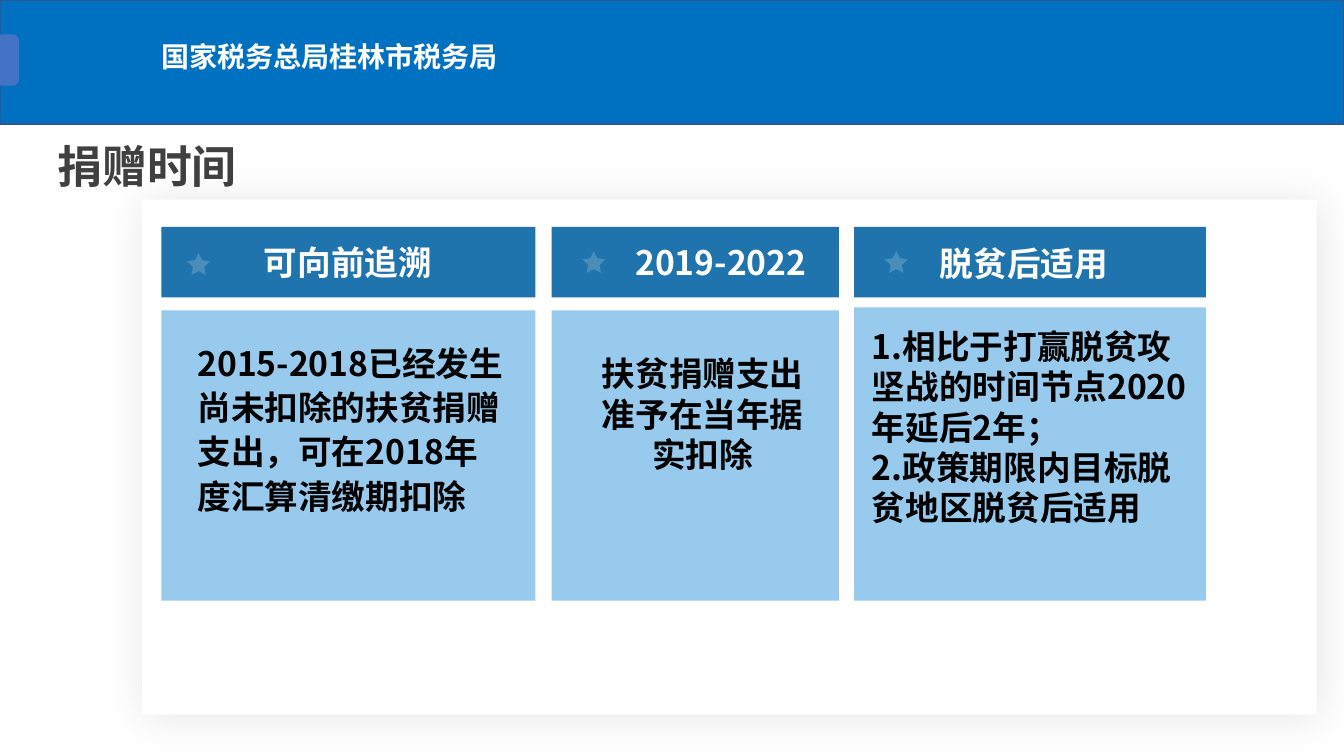
from dataclasses import dataclass
from math import cos, pi, sin

from lxml.etree import SubElement
from pptx import Presentation
from pptx.dml.color import RGBColor
from pptx.enum.shapes import MSO_SHAPE
from pptx.enum.text import MSO_ANCHOR, MSO_AUTO_SIZE, PP_ALIGN
from pptx.oxml.ns import qn
from pptx.util import Inches, Pt


@dataclass(frozen=True)
class Theme:
    font: str = "Noto Sans CJK SC"
    band: str = "0070C0"
    band_line: str = "325491"
    tab: str = "4472C4"
    header: str = "1F74AD"
    body: str = "97CAEC"
    white: str = "FFFFFF"
    black: str = "000000"
    title: str = "404040"
    star: str = "F2F2F2"
    office_size: int = 20
    text_size: int = 24
    title_size: int = 32


@dataclass(frozen=True)
class Box:
    left: float
    top: float
    width: float
    height: float

    def lengths(self) -> list:
        return [Inches(v) for v in (self.left, self.top, self.width, self.height)]


@dataclass(frozen=True)
class Column:
    left: float
    width: float
    body_top: float
    star: tuple[float, float]
    header: str
    header_box: Box
    lines: tuple[str, ...]
    text_box: Box
    align: PP_ALIGN = PP_ALIGN.LEFT
    spacing: float = 1.0
    wrap: bool = True


THEME = Theme()
HEADER_TOP, HEADER_HEIGHT, BODY_BOTTOM = 2.25, 0.7, 5.96
STAR_RADIUS = 0.12

COLUMNS = (
    Column(1.6, 3.71, 3.08, (1.97, 2.63), "可向前追溯", Box(2.42, 2.35, 2.06, 0.5),
           ("2015-2018已经发生尚未扣除的扶贫捐赠支出，可在2018年度汇算清缴期扣除",),
           Box(1.86, 3.31, 3.28, 1.86), spacing=1.1),
    Column(5.47, 2.85, 3.08, (5.89, 2.61), "2019-2022", Box(6.1, 2.35, 2.1, 0.5),
           ("扶贫捐赠支出准予在当年据实扣除",),
           Box(5.74, 3.39, 2.46, 1.43), PP_ALIGN.CENTER),
    Column(8.47, 3.49, 3.05, (8.89, 2.61), "脱贫后适用", Box(9.16, 2.36, 1.99, 0.5),
           ("1.相比于打赢脱贫攻", "坚战的时间节点2020", "年延后2年；",
            "2.政策期限内目标脱", "贫地区脱贫后适用"),
           Box(8.55, 3.27, 2.51, 1.93), wrap=False),
)


def paint(sp, color: str) -> None:
    sp.shadow.inherit = False
    sp.fill.solid()
    sp.fill.fore_color.rgb = RGBColor.from_string(color)
    sp.line.fill.background()


def add_rect(shapes, box: Box, color: str):
    sp = shapes.add_shape(MSO_SHAPE.RECTANGLE, *box.lengths())
    paint(sp, color)
    return sp


def add_outline(shapes, points: list[tuple[float, float]], color: str):
    start, *rest = [(Inches(x), Inches(y)) for x, y in points]
    builder = shapes.build_freeform(*start)
    builder.add_line_segments(rest, close=True)
    sp = builder.convert_to_shape()
    paint(sp, color)
    return sp


def write(sp, lines: tuple[str, ...], size: int, color: str,
          align: PP_ALIGN = PP_ALIGN.LEFT, spacing: float = 1.0, **frame) -> None:
    tf = sp.text_frame
    settings = {"word_wrap": True, "vertical_anchor": MSO_ANCHOR.TOP,
                "auto_size": MSO_AUTO_SIZE.NONE} | frame
    for name, value in settings.items():
        setattr(tf, name, value)
    for i, line in enumerate(lines):
        p = tf.add_paragraph() if i else tf.paragraphs[0]
        p.alignment, p.line_spacing = align, spacing
        r = p.add_run()
        r.text = line
        for name, value in {"size": Pt(size), "bold": True, "name": THEME.font}.items():
            setattr(r.font, name, value)
        r.font.color.rgb = RGBColor.from_string(color)
        SubElement(r.font._element, qn("a:ea"), typeface=THEME.font)


def add_alpha(color, percent: int) -> None:
    SubElement(color, qn("a:alpha"), val=str(percent * 1000))


def add_panel_shadow(sp) -> None:
    effects = sp._element.spPr.find(qn("a:effectLst"))
    shadow = SubElement(effects, qn("a:outerShdw"), blurRad=str(Pt(32)), dist=str(Pt(3)),
                        dir=str(45 * 60000), algn="ctr", rotWithShape="0")
    add_alpha(SubElement(shadow, qn("a:srgbClr"), val=THEME.black), 10)


def add_star(shapes, center: tuple[float, float]) -> None:
    radii = [STAR_RADIUS / (1 + i % 2) for i in range(10)]
    points = [(center[0] + radius * sin(i * pi / 5), center[1] - radius * cos(i * pi / 5))
              for i, radius in enumerate(radii)]
    sp = add_outline(shapes, points, THEME.star)
    add_alpha(sp._element.spPr.find(qn("a:solidFill"))[0], 20)


def add_tab(shapes, box: Box, radius: float) -> None:
    turns = [i * pi / 16 for i in range(9)]
    x, bottom = box.left + box.width - radius, box.top + box.height
    upper = [(x + radius * sin(t), box.top + radius * (1 - cos(t))) for t in turns]
    lower = [(x + radius * cos(t), bottom - radius * (1 - sin(t))) for t in turns]
    add_outline(shapes, [(box.left, box.top), *upper, *lower, (box.left, bottom)], THEME.tab)


def add_column(shapes, col: Column) -> None:
    add_rect(shapes, Box(col.left, HEADER_TOP, col.width, HEADER_HEIGHT), THEME.header)
    write(shapes.add_textbox(*col.header_box.lengths()), (col.header,), THEME.text_size,
          THEME.white, PP_ALIGN.CENTER)
    add_rect(shapes, Box(col.left, col.body_top, col.width, BODY_BOTTOM - col.body_top),
             THEME.body)
    write(shapes.add_textbox(*col.text_box.lengths()), col.lines, THEME.text_size, THEME.black,
          col.align, col.spacing, word_wrap=col.wrap, vertical_anchor=MSO_ANCHOR.MIDDLE)
    add_star(shapes, col.star)


def main() -> None:
    prs = Presentation()
    prs.slide_width, prs.slide_height = Inches(13.33), Inches(7.5)
    shapes = prs.slides.add_slide(prs.slide_layouts[5]).shapes

    title = shapes.title
    title.left, title.top, title.width, title.height = Box(0.46, 1.22, 2, 0.69).lengths()
    write(title, ("捐赠时间",), THEME.title_size, THEME.title, PP_ALIGN.CENTER, 1.2,
          word_wrap=False, auto_size=MSO_AUTO_SIZE.SHAPE_TO_FIT_TEXT)

    band = add_rect(shapes, Box(0, 0, 13.33, 1.23), THEME.band)
    band.line.color.rgb = RGBColor.from_string(THEME.band_line)
    band.line.width = Pt(1)
    write(shapes.add_textbox(*Box(1.5, 0.34, 4.95, 0.44).lengths()),
          ("国家税务总局桂林市税务局",), THEME.office_size, THEME.white)
    add_tab(shapes, Box(0, 0.34, 0.19, 0.51), 0.07)

    add_panel_shadow(add_rect(shapes, Box(1.41, 1.98, 11.65, 5.11), THEME.white))
    for col in COLUMNS:
        add_column(shapes, col)
    prs.save("out.pptx")


if __name__ == "__main__":
    main()
